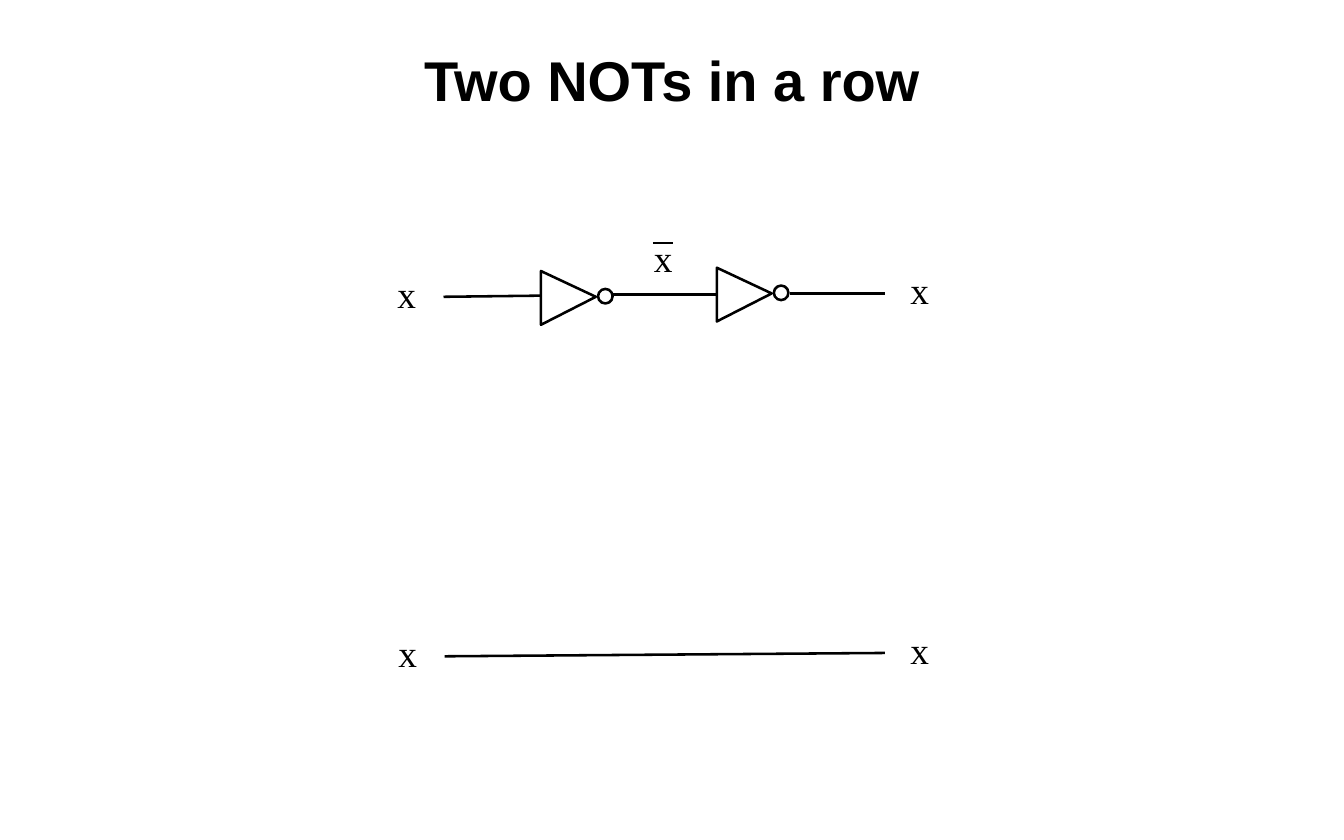
"""Build a slide showing that two NOT gates in a row equal a plain wire."""
from pptx import Presentation
from pptx.dml.color import RGBColor
from pptx.enum.shapes import MSO_CONNECTOR as CONN, MSO_SHAPE as SHAPE
from pptx.enum.text import MSO_ANCHOR as ANCHOR, MSO_AUTO_SIZE as FIT, PP_ALIGN as ALIGN
from pptx.oxml.ns import qn
from pptx.util import Inches, Pt

COLORS = {"ink": "000000", "paper": "FFFFFF"}
INK = RGBColor.from_string(COLORS["ink"])
WIRE = 1.63


def set_line(sp, width=WIRE):
    sp.line.color.rgb = INK
    sp.line.width = Pt(width)


def add_text(shapes, text, box, font, size, bold=False):
    sp = shapes.add_textbox(*[Inches(v) for v in box])
    tf = sp.text_frame
    tf.text = text
    f = tf.paragraphs[0].runs[0].font
    f.name, f.size, f.bold = font, Pt(size), bold
    f.color.rgb = INK
    return tf


prs = Presentation()
prs.slide_width, prs.slide_height = Inches(12), Inches(7.5)
s = prs.slides.add_slide(prs.slide_layouts[6])
s.background.fill.solid()
s.background.fill.fore_color.rgb = RGBColor.from_string(COLORS["paper"])

tf = add_text(s.shapes, "Two NOTs in a row", (0, 0.33, 12, 0.75), "Arial", 36, True)
tf.word_wrap = True
tf.vertical_anchor = ANCHOR.MIDDLE
tf.paragraphs[0].alignment = ALIGN.CENTER

gates = s.shapes.add_group_shape().shapes
plain = s.shapes.add_group_shape().shapes

for x, y in [(4.83, 2.42), (6.4, 2.39)]:
    fb = gates.build_freeform(Inches(x + 0.49), Inches(y + 0.23), scale=1.0)
    fb.add_line_segments([(Inches(x), Inches(y + 0.48)), (Inches(x), Inches(y))], close=True)
    triangle = fb.convert_to_shape()
    bubble = gates.add_shape(
        SHAPE.OVAL, Inches(x + 0.51), Inches(y + 0.16), Inches(0.13), Inches(0.13))
    for sp in (triangle, bubble):
        sp.shadow.inherit = False
        sp.fill.background()
        set_line(sp)

lines = [
    (gates, 4.82, 2.64, 3.96, 2.65, WIRE),
    (gates, 6.4, 2.63, 5.46, 2.63, WIRE),
    (gates, 7.9, 2.62, 7.05, 2.62, WIRE),
    (gates, 5.83, 2.17, 6.01, 2.17, 1.75),
    (plain, 7.9, 5.83, 3.97, 5.86, WIRE),
]
for shapes, x1, y1, x2, y2, width in lines:
    line = shapes.add_connector(CONN.STRAIGHT, Inches(x1), Inches(y1), Inches(x2), Inches(y2))
    line._element.spPr.get_or_add_ln()
    set_line(line, width)
    line._element.spPr.append(line._element.spPr.makeelement(qn("a:effectLst"), {}))

labels = [
    (gates, 3.45, 2.37), (gates, 5.74, 2.05), (gates, 8.03, 2.34),
    (plain, 3.46, 5.58), (plain, 8.03, 5.55),
]
for shapes, x, y in labels:
    tf = add_text(shapes, "x", (x, y, 0.37, 0.51), "Times New Roman", 24)
    tf.word_wrap = False
    tf.auto_size = FIT.SHAPE_TO_FIT_TEXT

prs.save("out.pptx")
